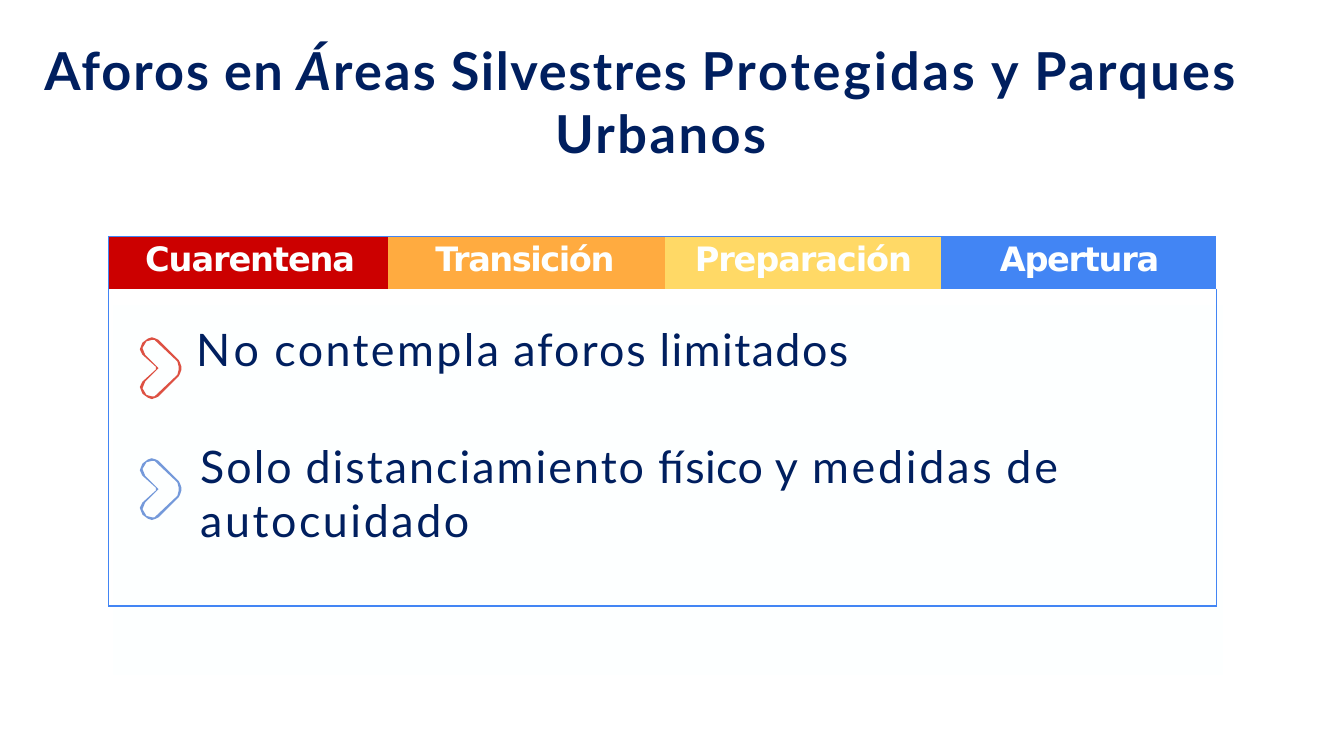
from lxml import etree
from pptx import Presentation
from pptx.dml.color import RGBColor
from pptx.enum.text import MSO_ANCHOR, MSO_AUTO_SIZE, PP_ALIGN
from pptx.oxml.ns import qn
from pptx.util import Inches, Pt

LEFT = PP_ALIGN.LEFT
TOP = MSO_ANCHOR.TOP
NO_AUTOSIZE = MSO_AUTO_SIZE.NONE
TITLE_ONLY_LAYOUT = 5

NAVY, PALE, BLUE = "001F5F", "FDFFFF", "4285F4"
RED_MARK, BLUE_MARK = "DD5143", "7499DA"

# Phase, fill, column width, left indent, letter spacing
PHASES = [
    ("Cuarentena", "CC0000", 2.08, 0.27, -0.6),
    ("Transición", "FFAB40", 2.06, 0.35, -0.8),
    ("Preparación", "FFD966", 2.05, 0.22, -0.6),
    ("Apertura", BLUE, 2.05, 0.44, -0.7),
]
# Left indent, space before, (text, letter spacing) pieces
MEASURES = [
    (0.65, 18.1, [("No ", 2.1), ("contempla ", 1.3), ("aforos ", 1.1), ("limitados", 0.8)]),
    (0.68, 34, [("Solo ", 1.1), ("distanciamiento ", 1.1), ("físico ", 0.2), ("y ", 1.4),
                ("medidas ", 1.5), ("de", 1.6)]),
    (0.68, 0, [("autocuidado", 1.4)]),
]
TITLE = [("Aforos ", 1.1), ("en ", 0.8), ("Á", 1.2), ("reas ", 1.2), ("Silvestres ", 0.9),
         ("Protegidas ", 1.6), ("y ", 1.7), ("Parques ", 1.3), ("Urbanos", 1.4)]
ITALIC_LETTER = "Á"

# Upper halves of the chevron's contours, from the notch to the tip
CHEVRON_HEIGHT = 0.46
OUTER_HALF = [(0.12, 0.22), (0.02, 0.13), (0, 0.09), (0.02, 0.04), (0.06, 0.01), (0.09, 0),
              (0.12, 0.01), (0.14, 0.02), (0.29, 0.17), (0.3, 0.19), (0.31, 0.22)]
INNER_HALF = [(0.14, 0.23), (0.04, 0.13), (0.02, 0.08), (0.05, 0.03), (0.09, 0.02),
              (0.11, 0.02), (0.28, 0.18), (0.29, 0.22)]


def color(value):
    return RGBColor.from_string(value)


def write_paragraph(paragraph, pieces, font_name, size, text_color, bold, indent,
                    space_before=0, hanging=0):
    """Fill a paragraph with (text, letter spacing) pieces; the gaps stay unspaced."""
    properties = paragraph._p.get_or_add_pPr()
    properties.set("marL", str(Inches(indent)))
    properties.set("indent", str(-Inches(hanging)))
    paragraph.alignment = LEFT
    paragraph.space_before = Pt(space_before)
    font = paragraph.font
    font.name, font.size, font.bold = font_name, Pt(size), bold
    font.color.rgb = color(text_color)
    for text, spacing in pieces:
        word = text.rstrip()
        run = paragraph.add_run()
        run.text = word
        run._r.get_or_add_rPr().set("spc", str(round(spacing * 100)))
        if word == ITALIC_LETTER:
            run.font.italic = True
        if word != text:
            paragraph.add_run().text = " "


def set_margins(target, top):
    target.margin_left = target.margin_right = target.margin_bottom = 0
    target.margin_top = Inches(top)


def set_borders(cell, sides):
    """Draw a thin blue line on the given sides and none on the others."""
    properties = cell._tc.get_or_add_tcPr()
    for side in "LRTB":
        line = etree.SubElement(properties, qn(f"a:ln{side}"), w=str(Pt(0.75)))
        if side in sides:
            fill = etree.SubElement(line, qn("a:solidFill"))
            etree.SubElement(fill, qn("a:srgbClr"), val=BLUE)
        else:
            etree.SubElement(line, qn("a:noFill"))


def place_title(slide, left, top, width, height):
    title = slide.shapes.title
    title.left, title.top = Inches(left), Inches(top)
    title.width, title.height = Inches(width), Inches(height)
    frame = title.text_frame
    frame.word_wrap, frame.auto_size, frame.vertical_anchor = True, NO_AUTOSIZE, TOP
    set_margins(frame, 0.03)
    paragraph = frame.paragraphs[0]
    write_paragraph(paragraph, TITLE, "Lato", 28, NAVY, True, 3.82, 2.2, 3.8)
    paragraph.line_spacing = Pt(33.4)


def place_freeform(slide, left, top, contours, fill):
    """Fill the area between closed contours given in inches from left and top."""
    contours = [[(Inches(x), Inches(y)) for x, y in contour] for contour in contours]
    builder = slide.shapes.build_freeform(*contours[0][0])
    for contour in contours:
        if contour is not contours[0]:
            builder.move_to(*contour[0])
        builder.add_line_segments(contour[1:])
    shape = builder.convert_to_shape(Inches(left), Inches(top))
    shape.shadow.inherit = False
    shape.fill.solid()
    shape.fill.fore_color.rgb = color(fill)
    shape.line.fill.background()


def place_panel(slide, left, top, width, height):
    corners = [(0, 0), (width, 0), (width, height), (0, height)]
    place_freeform(slide, left, top, [corners], PALE)


def place_chevron(slide, left, top, fill):
    contours = [half + [(x, CHEVRON_HEIGHT - y) for x, y in reversed(half)]
                for half in (OUTER_HALF, INNER_HALF)]
    place_freeform(slide, left, top, contours, fill)


def place_phase_table(slide, left, top, width, height):
    header_height = 0.39
    table = slide.shapes.add_table(2, len(PHASES), Inches(left), Inches(top),
                                   Inches(width), Inches(height)).table
    table.first_row = table.horz_banding = False
    table.rows[0].height = Inches(header_height)
    table.rows[1].height = Inches(height - header_height)

    for index, (name, fill, column_width, indent, spacing) in enumerate(PHASES):
        table.columns[index].width = Inches(column_width)
        cell = table.cell(0, index)
        set_margins(cell, 0.03)
        set_borders(cell, "LT" if index == 0 else "T")
        cell.fill.solid()
        cell.fill.fore_color.rgb = color(fill)
        write_paragraph(cell.text_frame.paragraphs[0], [(name, spacing)],
                        "DejaVu Sans", 18, PALE, True, indent, 2.5)

    body = table.cell(1, 0)
    body.merge(table.cell(1, len(PHASES) - 1))
    set_margins(body, 0.25)
    for index in range(len(PHASES)):
        cell = table.cell(1, index)
        set_borders(cell, "LRB" if index == 0 else "RB" if index == len(PHASES) - 1 else "B")
        cell.fill.background()
    frame = body.text_frame
    for index, (indent, space_before, pieces) in enumerate(MEASURES):
        paragraph = frame.add_paragraph() if index else frame.paragraphs[0]
        write_paragraph(paragraph, pieces, "Lato", 24, NAVY, False, indent, space_before)


def main():
    presentation = Presentation()
    presentation.slide_width, presentation.slide_height = Inches(10), Inches(5.625)
    slide = presentation.slides.add_slide(presentation.slide_layouts[TITLE_ONLY_LAYOUT])
    place_title(slide, 0.31, 0.26, 9.25, 0.96)
    place_panel(slide, 0.84, 2.27, 8.26, 2.75)
    place_chevron(slide, 1.04, 2.51, RED_MARK)
    place_phase_table(slide, 0.81, 1.76, 8.26, 2.75)
    place_chevron(slide, 1.04, 3.41, BLUE_MARK)
    presentation.save("out.pptx")


if __name__ == "__main__":
    main()
